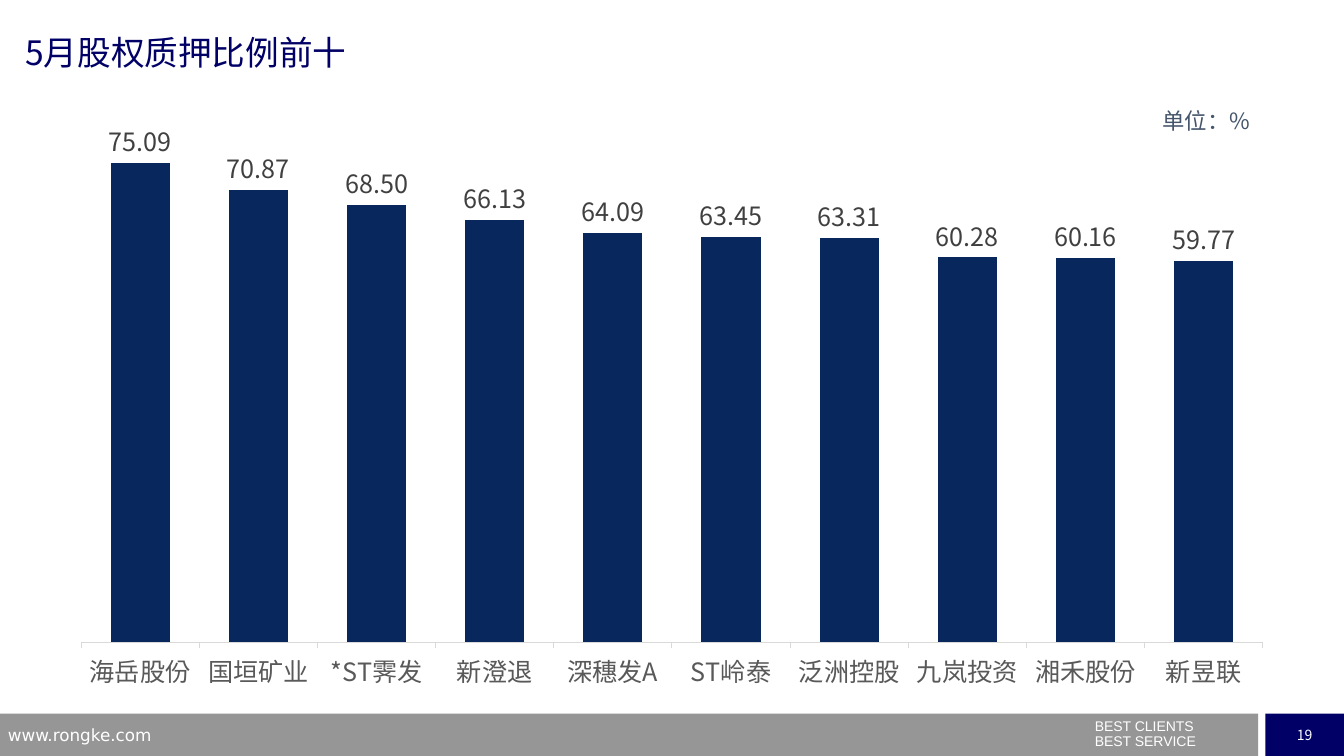
from dataclasses import dataclass

from lxml import etree
from pptx import Presentation
from pptx.chart.data import CategoryChartData
from pptx.dml.color import RGBColor
from pptx.enum.chart import XL_CHART_TYPE, XL_LABEL_POSITION, XL_TICK_LABEL_POSITION, XL_TICK_MARK
from pptx.enum.shapes import MSO_SHAPE
from pptx.enum.text import MSO_ANCHOR, PP_ALIGN
from pptx.oxml.ns import qn
from pptx.util import Inches, Pt

COLUMNS = XL_CHART_TYPE.COLUMN_CLUSTERED
OUTSIDE_END = XL_LABEL_POSITION.OUTSIDE_END
NO_LABELS = XL_TICK_LABEL_POSITION.NONE
TICK_OUTSIDE = XL_TICK_MARK.OUTSIDE
TICK_NONE = XL_TICK_MARK.NONE
RECTANGLE = MSO_SHAPE.RECTANGLE
MIDDLE, TOP = MSO_ANCHOR.MIDDLE, MSO_ANCHOR.TOP
LEFT, CENTER, JUSTIFY = PP_ALIGN.LEFT, PP_ALIGN.CENTER, PP_ALIGN.JUSTIFY

PLEDGE_RATIOS = {
    "海岳股份": 75.09, "国垣矿业": 70.87, "*ST霁发": 68.50, "新澄退": 66.13, "深穗发A": 64.09,
    "ST岭泰": 63.45, "泛洲控股": 63.31, "九岚投资": 60.28, "湘禾股份": 60.16, "新昱联": 59.77,
}


@dataclass(frozen=True)
class Theme:
    navy: str = "000066"
    footer: str = "969696"
    white: str = "FFFFFF"
    slate: str = "44546A"
    bar: str = "08275D"
    value_label: str = "404040"
    category_label: str = "595959"
    axis: str = "D9D9D9"
    title_size: int = 24
    chart_size: int = 18
    unit_size: int = 16
    site_size: int = 12
    small_size: int = 10
    text_font: str = "Noto Sans CJK SC"
    chart_font: str = "Noto Sans CJK JP"
    slogan_font: str = "Arial"
    site_font: str = "DejaVu Sans"


class SlideBuilder:
    """Draws on one slide; every box is (left, top, width, height) in percent of the slide."""

    def __init__(self, presentation, theme):
        self.presentation = presentation
        self.theme = theme
        self.slide = presentation.slides.add_slide(presentation.slide_layouts[6])

    def place(self, box):
        width, height = self.presentation.slide_width, self.presentation.slide_height
        return [int(share * side / 100) for share, side in zip(box, (width, height) * 2)]

    def style_font(self, font, name, size, color):
        font.name = name
        font.size = Pt(size)
        font.color.rgb = RGBColor.from_string(color)

    def style_chart_font(self, font, color):
        self.style_font(font, self.theme.chart_font, self.theme.chart_size, color)

    def rectangle(self, box, color):
        shape = self.slide.shapes.add_shape(RECTANGLE, *self.place(box))
        shape.shadow.inherit = False
        shape.fill.solid()
        shape.fill.fore_color.rgb = RGBColor.from_string(color)
        shape.line.fill.background()
        return shape

    def fill_text(self, shape, text, font, size, color, align=LEFT, anchor=TOP, wrap=True):
        frame = shape.text_frame
        frame.word_wrap = wrap
        frame.vertical_anchor = anchor
        frame.text = text
        for paragraph in frame.paragraphs:
            paragraph.alignment = align
            for run in paragraph.runs:
                self.style_font(run.font, font, size, color)
                east_asian = etree.SubElement(run.font._element, qn("a:ea"))
                east_asian.set("typeface", font)
        return frame

    def text(self, box, text, font, size, color, align=LEFT, margins=True):
        shape = self.slide.shapes.add_textbox(*self.place(box))
        frame = self.fill_text(shape, text, font, size, color, align)
        if not margins:
            frame.margin_left = frame.margin_top = frame.margin_right = frame.margin_bottom = 0
        return frame

    def column_chart(self, box, values, maximum, plot):
        theme = self.theme
        data = CategoryChartData(number_format="#,##0.00")
        data.categories = list(values)
        data.add_series("股权质押比例", list(values.values()))
        chart = self.slide.shapes.add_chart(COLUMNS, *self.place(box), data).chart
        chart.has_legend = False
        chart.has_title = False
        self.style_chart_font(chart.font, theme.category_label)

        columns = chart.plots[0]
        columns.gap_width = 100
        columns.overlap = -27
        columns.vary_by_categories = False
        fill = columns.series[0].format.fill
        fill.solid()
        fill.fore_color.rgb = RGBColor.from_string(theme.bar)

        columns.has_data_labels = True
        labels = columns.data_labels
        labels.show_value = True
        labels.position = OUTSIDE_END
        labels.number_format = "#,##0.00"
        labels.number_format_is_linked = False
        self.style_chart_font(labels.font, theme.value_label)

        categories = chart.category_axis
        categories.major_tick_mark = TICK_OUTSIDE
        categories.has_major_gridlines = False
        categories.format.line.color.rgb = RGBColor.from_string(theme.axis)
        categories.format.line.width = Pt(0.75)
        self.style_chart_font(categories.tick_labels.font, theme.category_label)

        scale = chart.value_axis
        scale.minimum_scale, scale.maximum_scale = 0, maximum
        scale.has_major_gridlines = False
        scale.major_tick_mark = TICK_NONE
        scale.tick_label_position = NO_LABELS
        scale.visible = False

        for properties in list(chart._chartSpace.iter(qn("a:defRPr"))):
            if properties.find(qn("a:latin")) is not None:
                etree.SubElement(properties, qn("a:ea")).set("typeface", theme.chart_font)
        self.lay_out_plot(chart, plot)

    def lay_out_plot(self, chart, plot):
        """Fixes the inner plot area as shares of the chart."""
        area = chart._chartSpace.find(".//" + qn("c:plotArea"))
        layout = area.find(qn("c:layout"))
        if layout is None:
            layout = etree.Element(qn("c:layout"))
            area.insert(0, layout)
        manual = etree.SubElement(layout, qn("c:manualLayout"))
        settings = {"layoutTarget": "inner", "xMode": "edge", "yMode": "edge"}
        settings.update(zip("xywh", plot))
        for name, value in settings.items():
            etree.SubElement(manual, qn("c:" + name)).set("val", str(value))


def draw_footer(builder):
    theme = builder.theme
    top, height = 94.4, 5.6
    builder.rectangle((0, top, 93.62, height), theme.footer)
    page = builder.rectangle((94.15, top, 5.85, height), theme.navy)
    builder.fill_text(page, "19", theme.text_font, theme.small_size, theme.white,
                      CENTER, MIDDLE, False)
    slogan = builder.text((80.72, 95.2, 19.2, 4.8), "BEST CLIENTS\nBEST SERVICE",
                          theme.slogan_font, theme.small_size, theme.white)
    for paragraph in slogan.paragraphs:
        paragraph.line_spacing = 0.5
    slogan.paragraphs[1].space_before = Pt(theme.small_size / 2)
    builder.text((-0.15, 95.2, 24.16, 3.47), "www.rongke.com",
                 theme.site_font, theme.site_size, theme.white)


def main():
    presentation = Presentation()
    presentation.slide_width = Inches(13.33)
    presentation.slide_height = Inches(7.5)
    theme = Theme()
    builder = SlideBuilder(presentation, theme)
    draw_footer(builder)
    builder.column_chart((6, 14.27, 88, 78.53), PLEDGE_RATIOS, 80, (0, 0.04, 1, 0.86))
    builder.text((1.88, 4.27, 67.5, 5.6), "5月股权质押比例前十",
                 theme.text_font, theme.title_size, theme.navy, margins=False)
    builder.text((86.5, 14.13, 7.5, 3.6), "单位：%",
                 theme.text_font, theme.unit_size, theme.slate, JUSTIFY, margins=False)
    presentation.save("out.pptx")


if __name__ == "__main__":
    main()
